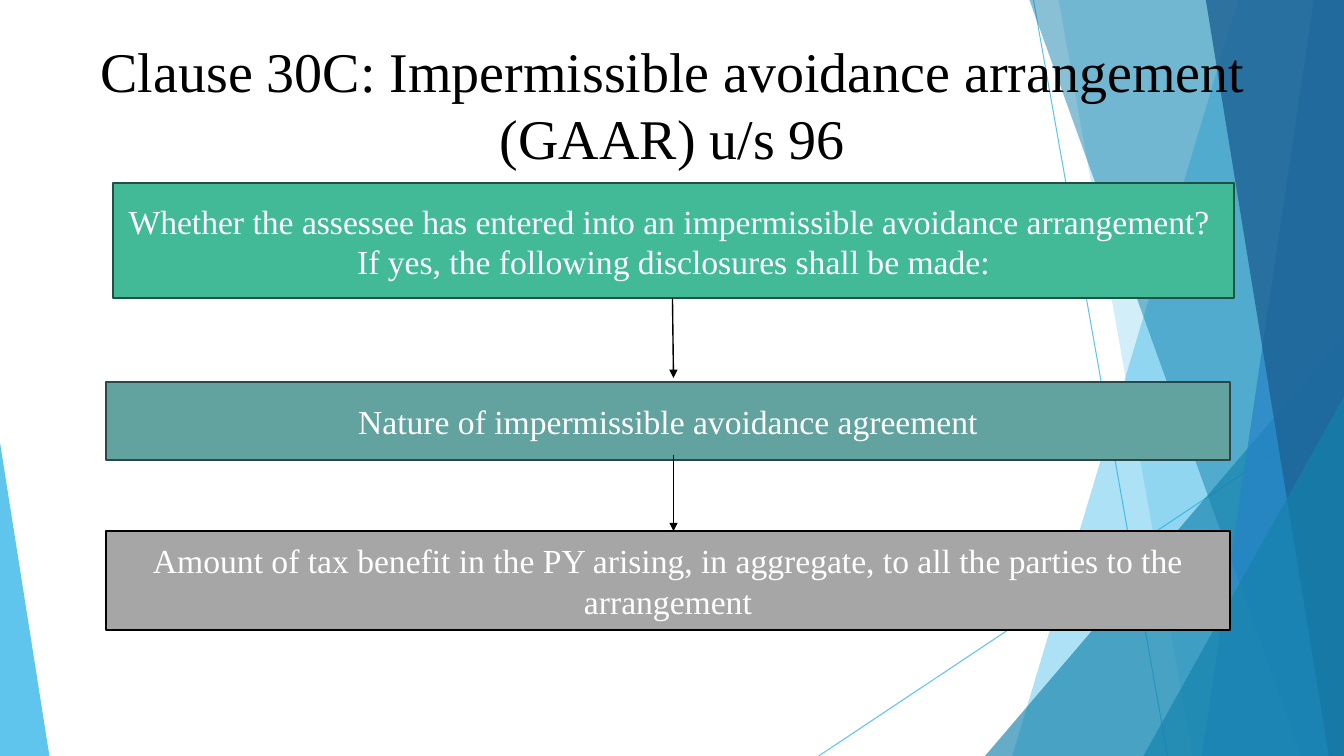
from lxml import etree
from pptx import Presentation, util as u
from pptx.dml.color import RGBColor
from pptx.enum import shapes, text
from pptx.oxml.ns import qn

COLORS = {
    "sky": "1CADE4", "teal": "1482AC", "blue": "2683C6", "navy": "1D6294",
    "green": "42BA97", "green_edge": "1D5242", "sage": "62A39F",
    "sage_edge": "2B4746", "gray": "A6A6A6", "black": "000000", "white": "FFFFFF",
}
FONT = "Times New Roman"
SLIDE = (0, 0, 13.33, 7.5)


def rgb(name):
    """Return the named colour."""
    return RGBColor.from_string(COLORS[name])


def set_fill(fill, color, alpha=100):
    """Fill with a solid colour at the given opacity in percent."""
    fill.solid()
    fill.fore_color.rgb = rgb(color)
    if alpha < 100:
        clr = fill._xPr.find(qn("a:solidFill"))[0]
        etree.SubElement(clr, qn("a:alpha"), val=str(alpha * 1000))


def add_line(s, start, end, color, width, alpha=100, arrow=False):
    """Draw a straight line, with an arrowhead at its end if asked."""
    c = s.shapes.add_connector(shapes.MSO_CONNECTOR.STRAIGHT,
                               *(u.Inches(v) for v in (*start, *end)))
    c.line.width = u.Pt(width)
    set_fill(c.line.fill, color, alpha)
    if arrow:
        etree.SubElement(c.line._get_or_add_ln(), qn("a:tailEnd"), type="triangle")
    etree.SubElement(c._element.spPr, qn("a:effectLst"))


def add_band(s, box, top_x, bottom_x, color, alpha):
    """Draw a slanted band from two left corners to the right edge of the box."""
    x, y, w, h = box
    points = [(u.Inches(px), u.Inches(py)) for px, py in
              ((x + top_x, y), (x + w, y), (x + w, y + h), (x + bottom_x, y + h))]
    fb = s.shapes.build_freeform(*points[0])
    fb.add_line_segments(points[1:], close=True)
    sp = fb.convert_to_shape()
    sp.shadow.inherit = False
    set_fill(sp.fill, color, alpha)
    sp.line.fill.background()


def add_corner(s, box, w, h, color, alpha, right=True):
    """Draw a triangle in a bottom corner of the box."""
    x = box[0] + (box[2] - w if right else 0)
    y = box[1] + box[3] - h
    sp = s.shapes.add_shape(shapes.MSO_SHAPE.ISOSCELES_TRIANGLE,
                            *(u.Inches(v) for v in (x, y, w, h)))
    sp.adjustments[0] = 1 if right else 0
    sp.shadow.inherit = False
    set_fill(sp.fill, color, alpha)
    sp.line.fill.background()


def add_backdrop(s, box):
    """Draw the translucent facets along the sides of the box."""
    x, y, w, h = box
    add_line(s, (x + 10.25, y), (x + 11.58, y + h), "sky", 0.75, 70)
    add_line(s, (x + w, y + 4.03), (x + 8.12, y + h), "sky", 0.75, 70)
    add_band(s, box, 12.28, 10.04, "sky", 36)
    add_band(s, box, 10.5, 11.83, "sky", 20)
    add_corner(s, box, 3.56, 4.17, "teal", 66)
    add_band(s, box, 10.21, 12.91, "teal", 50)
    add_band(s, box, 13.03, 11.92, "blue", 70)
    add_band(s, box, 11.96, 13.18, "navy", 80)
    add_corner(s, box, 1.99, 3.57, "teal", 66)
    add_corner(s, box, 0.49, 3.11, "sky", 70, right=False)


def write(sp, lines, size, color, anchor):
    """Write centred paragraphs into a shape."""
    tf = sp.text_frame
    tf.word_wrap = True
    tf.vertical_anchor = anchor
    tf.text = "\n".join(lines)
    for p in tf.paragraphs:
        p.alignment = text.PP_ALIGN.CENTER
        p.font.name = FONT
        p.font.size = u.Pt(size)
        p.font.color.rgb = rgb(color)


def add_title(s, box, title):
    """Place the slide title at the bottom of the box."""
    sp = s.shapes.add_textbox(*(u.Inches(v) for v in box))
    write(sp, [title], 40, "black", text.MSO_ANCHOR.BOTTOM)


def add_step(s, box, lines, fill, edge):
    """Draw one outlined box of the flow with its text."""
    sp = s.shapes.add_shape(shapes.MSO_SHAPE.RECTANGLE, *(u.Inches(v) for v in box))
    sp.shadow.inherit = False
    set_fill(sp.fill, fill)
    sp.line.color.rgb = rgb(edge)
    sp.line.width = u.Pt(1.5)
    write(sp, lines, 24, "white", text.MSO_ANCHOR.MIDDLE)


def add_flow(s, box):
    """Stack the three steps in the box and join them with arrows."""
    x, y, w, h = box
    add_step(s, (x + 0.07, y, w - 0.03, 1.14),
             ["Whether the assessee has entered into an impermissible avoidance arrangement? ",
              "If yes, the following disclosures shall be made:"], "green", "green_edge")
    add_step(s, (x, y + 1.97, w, 0.77),
             ["Nature of impermissible avoidance agreement"], "sage", "sage_edge")
    add_step(s, (x, y + h - 0.98, w, 0.98),
             ["Amount of tax benefit in the PY arising, in aggregate, "
              "to all the parties to the arrangement"], "gray", "black")
    mid = x + 5.63
    add_line(s, (mid - 0.01, y + 1.14), (mid, y + 1.93), "black", 1, arrow=True)
    add_line(s, (mid, y + 2.69), (mid, y + h - 0.98), "black", 1, arrow=True)


def main():
    """Build the slide and save it."""
    prs = Presentation()
    prs.slide_width, prs.slide_height = u.Inches(SLIDE[2]), u.Inches(SLIDE[3])
    s = prs.slides.add_slide(prs.slide_layouts[6])
    add_backdrop(s, SLIDE)
    add_title(s, (0.8, 0.3, 11.74, 1.44),
              "Clause 30C: Impermissible avoidance arrangement (GAAR) u/s 96")
    add_flow(s, (1.05, 1.82, 11.15, 4.43))
    prs.save("out.pptx")


if __name__ == "__main__":
    main()
